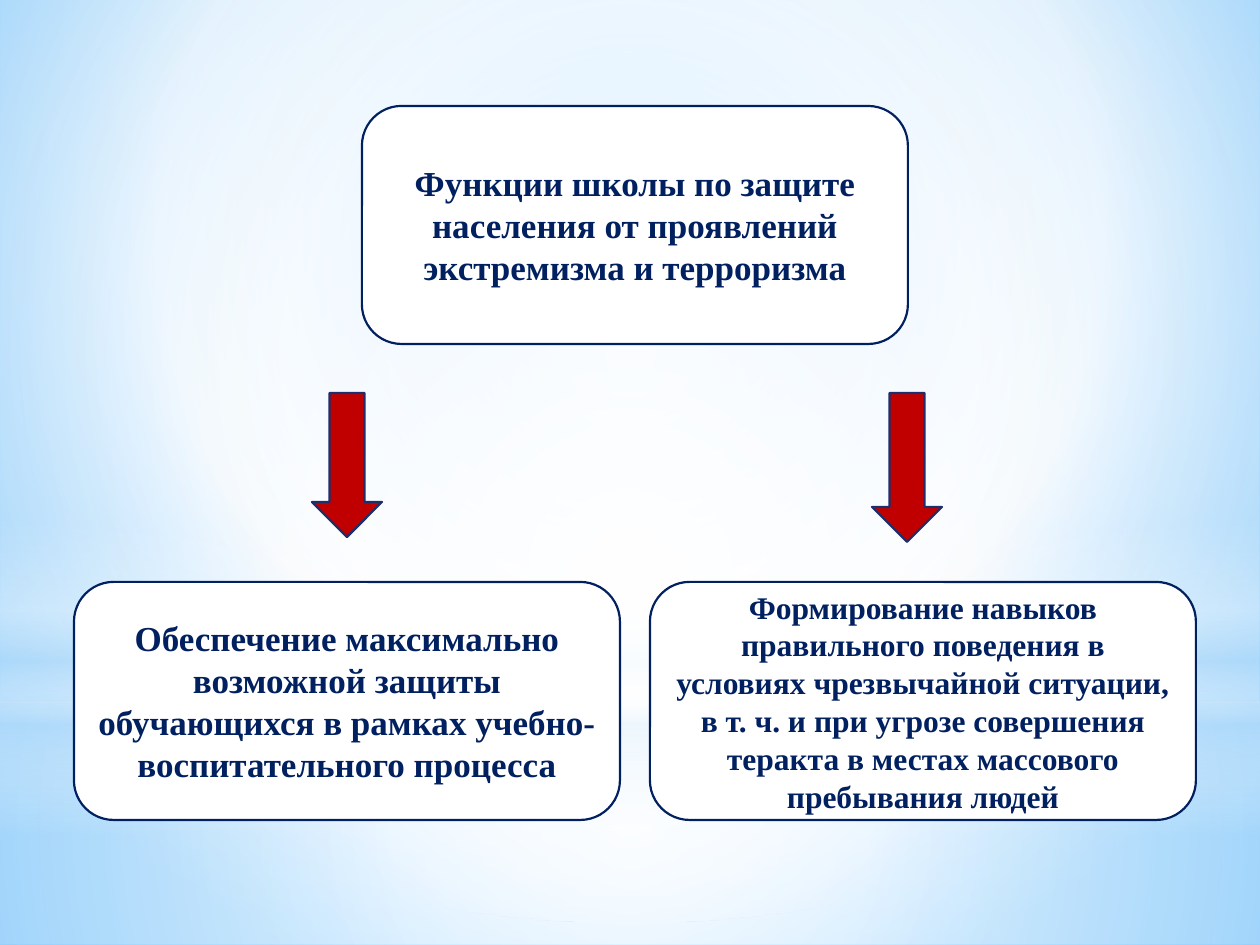
from lxml import etree
from pptx import Presentation, util as u
from pptx.dml.color import RGBColor
from pptx.enum import shapes, text
from pptx.oxml.ns import qn

PX = 914400 // 126
WIDTH, HEIGHT = 1260, 945
NAVY = RGBColor(0x00, 0x20, 0x60)
ARROW_LINE = RGBColor(0x1F, 0x2E, 0x69)
RED = RGBColor(0xC0, 0x00, 0x00)
WHITE = RGBColor(0xFF, 0xFF, 0xFF)
PALE = RGBColor(0xB4, 0xDC, 0xFA)
SKY = RGBColor(0x9E, 0xD5, 0xFF)
BLUE = RGBColor(0x5B, 0xB9, 0xFF)
SHAPE = shapes.MSO_SHAPE
FONT = "Times New Roman"

# Gradient stops: position %, colour, opacity %
BACKGROUND = [(0, SKY, 100), (60, WHITE, 100), (100, BLUE, 100)]
CENTRE = (50, 50, 50, 50)
# Backdrop: kind, top, height, stops, focus (None means top to bottom)
BACKDROP = [
    (SHAPE.RECTANGLE, 703, 242, [(0, WHITE, 91), (37, WHITE, 76), (100, PALE, 79)], CENTRE),
    (SHAPE.RECTANGLE, 0, 703, [(0, WHITE, 89), (48, WHITE, 62), (100, PALE, 79)], CENTRE),
    (SHAPE.RECTANGLE, 519, 315, [(0, WHITE, 0), (29, WHITE, 30), (45, PALE, 40),
                                 (55, WHITE, 26), (65, PALE, 60), (100, WHITE, 0)], None),
    (SHAPE.OVAL, 220, 703, [(0, WHITE, 100), (56, WHITE, 0)], CENTRE),
]

BOX_WIDTH, BOX_HEIGHT = 546, 238
# Boxes: left, top, font size, wording
BOXES = [
    (362, 106, 20, "Функции школы по защите населения от проявлений экстремизма и терроризма"),
    (74, 582, 20, "Обеспечение максимально возможной защиты обучающихся в рамках "
                  "учебно-воспитательного процесса"),
    (650, 582, 18, "Формирование навыков правильного поведения в условиях чрезвычайной ситуации, "
                   "в т. ч. и при угрозе совершения теракта в местах массового пребывания людей"),
]
ARROW_TOP, ARROW_WIDTH = 393, 70
# Arrows: centre x, length
ARROWS = [(347, 144), (907, 149)]


def set_gradient(fill, properties, stops, focus):
    """Swap a solid fill for a gradient with opacity."""
    fill.solid()
    solid = properties.find(qn("a:solidFill"))
    gradient = etree.Element(qn("a:gradFill"), rotWithShape="1")
    stop_list = etree.SubElement(gradient, qn("a:gsLst"))
    for position, colour, opacity in stops:
        stop = etree.SubElement(stop_list, qn("a:gs"), pos=str(position * 1000))
        value = etree.SubElement(stop, qn("a:srgbClr"), val=str(colour))
        if opacity < 100:
            etree.SubElement(value, qn("a:alpha"), val=str(opacity * 1000))
    if focus:
        circle = etree.SubElement(gradient, qn("a:path"), path="circle")
        edges = {side: str(share * 1000) for side, share in zip("ltrb", focus)}
        etree.SubElement(circle, qn("a:fillToRect"), **edges)
    else:
        etree.SubElement(gradient, qn("a:lin"), ang="5400000", scaled="0")
    properties.replace(solid, gradient)


def add_shape(slide, kind, left, top, width, height):
    shape = slide.shapes.add_shape(kind, *(round(n * PX) for n in (left, top, width, height)))
    shape.shadow.inherit = False
    return shape


def paint(shape, fill, line):
    shape.fill.solid()
    shape.fill.fore_color.rgb = fill
    shape.line.color.rgb = line
    shape.line.width = u.Pt(1.25)


def add_box(slide, left, top, size, wording):
    box = add_shape(slide, SHAPE.ROUNDED_RECTANGLE, left, top, BOX_WIDTH, BOX_HEIGHT)
    paint(box, WHITE, NAVY)
    frame = box.text_frame
    frame.word_wrap = True
    frame.vertical_anchor = text.MSO_ANCHOR.MIDDLE
    paragraph = frame.paragraphs[0]
    paragraph.text = wording
    paragraph.alignment = text.PP_ALIGN.CENTER
    font = paragraph.font
    font.name, font.size, font.bold = FONT, u.Pt(size), True
    font.color.rgb = NAVY


def add_arrow(slide, centre, length):
    # A right arrow turned about its centre to point down
    top = ARROW_TOP + (length - ARROW_WIDTH) / 2
    arrow = add_shape(slide, SHAPE.RIGHT_ARROW, centre - length / 2, top, length, ARROW_WIDTH)
    arrow.rotation = 90
    paint(arrow, RED, ARROW_LINE)


def main():
    presentation = Presentation()
    presentation.slide_width, presentation.slide_height = WIDTH * PX, HEIGHT * PX
    slide = presentation.slides.add_slide(presentation.slide_layouts[6])

    # Background and soft light
    fill = slide.background.fill
    fill.solid()
    set_gradient(fill, slide.element.find(".//" + qn("p:bgPr")), BACKGROUND, (20, 10, 20, 60))
    for kind, top, height, stops, focus in BACKDROP:
        shape = add_shape(slide, kind, 0, top, WIDTH, height)
        set_gradient(shape.fill, shape.element.spPr, stops, focus)
        shape.line.fill.background()

    # Scheme
    for box in BOXES:
        add_box(slide, *box)
    for arrow in ARROWS:
        add_arrow(slide, *arrow)

    presentation.save("out.pptx")


if __name__ == "__main__":
    main()
